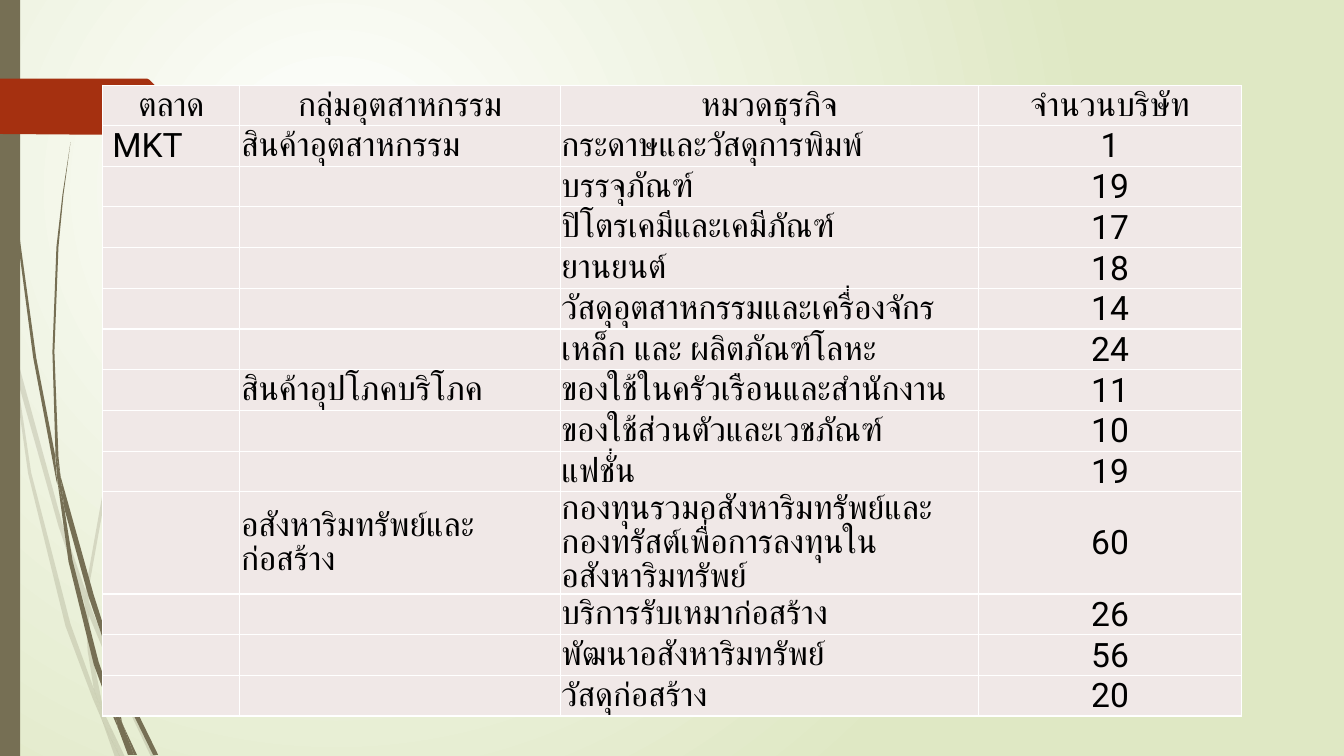
from lxml.etree import SubElement
from pptx import Presentation
from pptx.dml.color import RGBColor
from pptx.enum.shapes import MSO_SHAPE
from pptx.enum.text import MSO_ANCHOR, PP_ALIGN
from pptx.oxml import parse_xml
from pptx.oxml.ns import nsdecls, qn
from pptx.util import Cm, Pt

COLORS = {"white": "FFFFFF", "meadow": "DFE8C4", "olive": "766F54",
          "rust": "A53010", "cell": "F0E8E7", "text": "000000"}
FONT = "Roboto"
GRID = 750  # outline units over the slide height

PALE_GRASS = [
    [(11, 350), (9, 322), (0, 282), (0, 299), (10, 344)],
    [(58, 522), (84, 599), (85, 586), (62, 520), (14, 345), (17, 376)],
    [(92, 607), (88, 596), (88, 610), (123, 694), (150, 751), (155, 751), (127, 692)],
    [(119, 751), (124, 751), (105, 711)],
    [(93, 683), (70, 619), (31, 469), (17, 376), (11, 350), (28, 470), (65, 621),
     (92, 693), (101, 714), (99, 707)],
    [(84, 599), (87, 646), (93, 683), (96, 692), (105, 711), (103, 706), (91, 646),
     (88, 610), (88, 608)],
    [(88, 584), (110, 462), (160, 349), (229, 245), (268, 198), (290, 175), (312, 154),
     (312, 153), (289, 175), (268, 197), (228, 244), (158, 348), (107, 461), (85, 584),
     (85, 586), (88, 596)],
    [(101, 714), (114, 751), (119, 751)],
    [(88, 608), (88, 610), (88, 596), (85, 586), (84, 599)],
    [(96, 692), (93, 683), (99, 707), (101, 714), (119, 751), (105, 711)],
]
DARK_GRASS = [
    [(7, 110), (17, 233), (33, 355), (56, 477), (57, 481), (55, 457), (55, 453),
     (36, 355), (19, 232), (8, 109), (5, 48), (4, 0), (3, 0), (4, 48)],
    [(88, 592), (106, 645), (106, 633), (106, 631), (93, 590), (60, 472), (64, 505)],
    [(113, 649), (110, 641), (111, 656), (132, 708), (152, 749), (157, 749), (136, 706)],
    [(110, 691), (98, 657), (72, 556), (64, 505), (57, 477), (68, 557), (93, 659),
     (111, 708), (117, 722), (116, 717)],
    [(60, 472), (58, 453), (54, 349), (58, 245), (63, 193), (70, 141), (62, 193),
     (56, 245), (52, 349), (55, 449)],
    [(133, 749), (136, 749), (122, 719)],
    [(57, 477), (64, 505), (60, 472), (55, 449), (55, 453)],
    [(111, 633), (125, 552), (158, 476), (205, 406), (231, 374), (245, 359), (261, 344),
     (260, 344), (245, 358), (231, 373), (204, 405), (156, 474), (122, 551), (106, 631),
     (110, 641)],
    [(117, 722), (127, 749), (131, 749)],
    [(106, 645), (110, 691), (116, 706), (122, 719), (121, 716), (111, 656), (109, 651)],
    [(106, 645), (109, 651), (111, 656), (110, 641), (106, 631), (106, 633)],
    [(116, 706), (110, 691), (116, 717), (117, 722), (130, 749), (133, 749), (122, 719)],
]
TAG = [(173, 108), (148, 133), (146, 134), (136, 134), (0, 133), (0, 78), (136, 78),
       (146, 78), (148, 79), (173, 104), (174, 106)]

HEADERS = ["ตลาด", "กลุ่มอุตสาหกรรม", "หมวดธุรกิจ", "จำนวนบริษัท"]
MARKET = "MKT"
INDUSTRIES = {
    "สินค้าอุตสาหกรรม": [
        ("กระดาษและวัสดุการพิมพ์", 1), ("บรรจุภัณฑ์", 19), ("ปิโตรเคมีและเคมีภัณฑ์", 17),
        ("ยานยนต์", 18), ("วัสดุอุตสาหกรรมและเครื่องจักร", 14),
        ("เหล็ก และ ผลิตภัณฑ์โลหะ", 24)],
    "สินค้าอุปโภคบริโภค": [
        ("ของใช้ในครัวเรือนและสำนักงาน", 11), ("ของใช้ส่วนตัวและเวชภัณฑ์", 10),
        ("แฟชั่น", 19)],
    "อสังหาริมทรัพย์และก่อสร้าง": [
        ("กองทุนรวมอสังหาริมทรัพย์และกองทรัสต์เพื่อการลงทุนในอสังหาริมทรัพย์", 60),
        ("บริการรับเหมาก่อสร้าง", 26), ("พัฒนาอสังหาริมทรัพย์", 56), ("วัสดุก่อสร้าง", 20)],
}
COLUMN_WEIGHTS = [136, 318, 415, 261]
LONG_NAME = 40  # longer names get a double row


def rgb(name):
    return RGBColor.from_string(COLORS[name])


def paint(sp, color, opacity=100):
    sp.shadow.inherit = False
    sp.fill.solid()
    sp.fill.fore_color.rgb = rgb(color)
    sp.line.fill.background()
    if opacity < 100:
        clr = sp.fill._xPr.find(".//" + qn("a:srgbClr"))
        SubElement(clr, qn("a:alpha"), val=str(opacity * 1000))


def add_outline(shapes, box, points, color, opacity=100):
    left, top, _, height = box
    unit = height / GRID
    corners = [(left + x * unit, top + y * unit) for x, y in points]
    builder = shapes.build_freeform(*corners[0], scale=1.0)
    builder.add_line_segments(corners[1:], close=True)
    paint(builder.convert_to_shape(), color, opacity)


def add_background(s):
    """Radial glow centred in the upper left quarter."""
    fill = s.background.fill
    fill.gradient()
    for stop, color in zip(fill.gradient_stops, ("white", "meadow")):
        stop.color.rgb = rgb(color)
    lin = s.element.find(".//" + qn("a:lin"))
    lin.getparent().replace(lin, parse_xml(
        f'<a:path {nsdecls("a")} path="circle">'
        '<a:fillToRect l="50000" t="50000" r="100000" b="100000"/></a:path>'))


def add_left_decor(s, box):
    for blades, opacity in ((PALE_GRASS, 20), (DARK_GRASS, 100)):
        group = s.shapes.add_group_shape()
        for points in blades:
            add_outline(group.shapes, box, points, "olive", opacity)
    left, top, _, height = box
    bar = s.shapes.add_shape(MSO_SHAPE.RECTANGLE, left, top, Cm(0.51), height)
    paint(bar, "olive")
    add_outline(s.shapes, box, TAG, "rust")


def write(tf, text, size=24, color="text", align=PP_ALIGN.LEFT):
    p = tf.paragraphs[0]
    p.alignment = align
    r = p.add_run()
    r.text = text
    r.font.size, r.font.name = Pt(size), FONT
    r.font.color.rgb = rgb(color)


def style_cell(cell):
    cell.fill.solid()
    cell.fill.fore_color.rgb = rgb("cell")
    cell.vertical_anchor = MSO_ANCHOR.MIDDLE
    cell.margin_left = cell.margin_top = cell.margin_right = Cm(0.03)
    cell.margin_bottom = 0
    tc_pr = cell._tc.get_or_add_tcPr()
    for i, side in enumerate(("lnL", "lnR", "lnT", "lnB")):
        tc_pr.insert(i, parse_xml(
            f'<a:{side} {nsdecls("a")} w="{Pt(1)}"><a:solidFill>'
            f'<a:srgbClr val="{COLORS["white"]}"/></a:solidFill></a:{side}>'))


def table_rows():
    rows = [HEADERS]
    for industry, sectors in INDUSTRIES.items():
        for i, (sector, count) in enumerate(sectors):
            market = MARKET if len(rows) == 1 else ""
            rows.append([market, "" if i else industry, sector, str(count)])
    return rows


def add_company_table(s, box):
    rows = table_rows()
    _, _, width, height = box
    table = s.shapes.add_table(len(rows), len(HEADERS), *box).table
    table.first_row = table.horz_banding = False
    for column, weight in zip(table.columns, COLUMN_WEIGHTS):
        column.width = int(width * weight / sum(COLUMN_WEIGHTS))
    row_weights = [2 if len(row[2]) > LONG_NAME else 1 for row in rows]
    for i, (row, weight) in enumerate(zip(rows, row_weights)):
        table.rows[i].height = int(height * weight / sum(row_weights))
        for j, text in enumerate(row):
            cell = table.cell(i, j)
            style_cell(cell)
            if text == MARKET:
                cell.margin_left = Cm(0.24)
            if text:
                centred = i == 0 or j == len(HEADERS) - 1
                write(cell.text_frame, text,
                      align=PP_ALIGN.CENTER if centred else PP_ALIGN.LEFT)


def main():
    prs = Presentation()
    prs.slide_width, prs.slide_height = Cm(33.87), Cm(19.05)
    s = prs.slides.add_slide(prs.slide_layouts[6])
    add_background(s)
    add_left_decor(s, (0, 0, prs.slide_width, prs.slide_height))
    add_company_table(s, (Cm(2.59), Cm(2.15), Cm(28.7), Cm(15.15)))
    prs.save("out.pptx")


if __name__ == "__main__":
    main()
